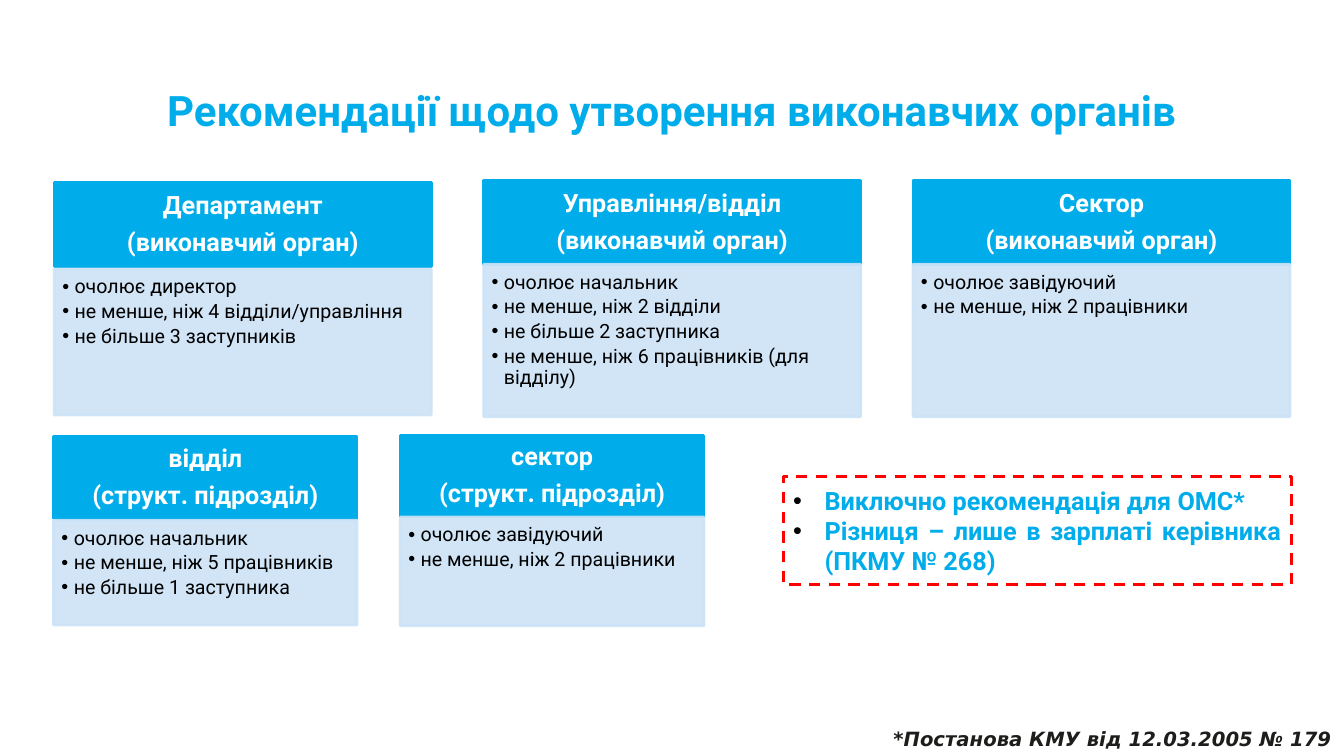
from dataclasses import dataclass

from lxml.etree import SubElement
from pptx import Presentation
from pptx.dml.color import RGBColor
from pptx.enum.dml import MSO_LINE
from pptx.enum.shapes import MSO_SHAPE
from pptx.enum.text import MSO_ANCHOR, PP_ALIGN
from pptx.oxml.ns import qn
from pptx.util import Cm, Pt


@dataclass(frozen=True)
class Theme:
    blue: str = "00ACE9"
    pale: str = "CCE3F7"
    red: str = "FF0000"
    white: str = "FFFFFF"
    black: str = "000000"
    ink: str = "1D1D1B"
    font: str = "Roboto"
    note_font: str = "DejaVu Sans"
    title: int = 30
    head: int = 18
    body: int = 14
    line: int = 2
    alpha: int = 90


THEME = Theme()

TITLE = "Рекомендації щодо утворення виконавчих органів"
ORGAN = "(виконавчий орган)"
UNIT = "(структ. підрозділ)"

# Each card: heading, points, (head top, body top, body height) in cm
ORGANS = [
    (["Департамент", ORGAN],
     ["очолює директор", "не менше, ніж 4 відділи/управління",
      "не більше 3 заступників"],
     (4.6, 6.78, 3.68)),
    (["Управління/відділ", ORGAN],
     ["очолює начальник", "не менше, ніж 2 відділи", "не більше 2 заступника",
      "не менше, ніж 6 працівників (для відділу)"],
     (4.55, 6.66, 3.84)),
    (["Сектор", ORGAN],
     ["очолює завідуючий", "не менше, ніж 2 працівники"],
     (4.55, 6.66, 3.84)),
]
UNITS = [
    (["відділ", UNIT],
     ["очолює начальник", "не менше, ніж 5 працівників",
      "не більше 1 заступника"],
     (11.0, 13.11, 2.64)),
    (["сектор", UNIT],
     ["очолює завідуючий", "не менше, ніж 2 працівники"],
     (10.97, 13.03, 2.74)),
]
# Each row: cards, left, step, card width, head height in cm
ROWS = [
    (ORGANS, 1.37, 10.82, 9.5, 2.11),
    (UNITS, 1.35, 8.74, 7.65, 2.06),
]
ADVICE = ["Виключно рекомендація для ОМС*",
          "Різниця – лише в зарплаті керівника (ПКМУ № 268)"]
SOURCE = "*Постанова КМУ від\u00a012.03.2005 № 179"


def color(code):
    return RGBColor.from_string(code)


def fade(solid):
    """Make a solid fill partly transparent."""
    tone = solid.find(qn("a:srgbClr"))
    SubElement(tone, qn("a:alpha")).set("val", str(THEME.alpha * 1000))


def bullet(para, indent):
    props = para._p.get_or_add_pPr()
    props.set("marL", str(Cm(indent)))
    props.set("indent", str(-Cm(indent)))
    tone = SubElement(props, qn("a:buClr"))
    SubElement(tone, qn("a:srgbClr")).set("val", THEME.black)
    SubElement(props, qn("a:buFont")).set("typeface", "Arial")
    SubElement(props, qn("a:buChar")).set("char", "•")


def write(frame, lines, size, tone, bold=True, align=PP_ALIGN.CENTER,
          anchor=MSO_ANCHOR.MIDDLE, spacing=None, after=0, indent=None,
          font=THEME.font, italic=False):
    frame.word_wrap = True
    frame.vertical_anchor = anchor
    frame.text = "\n".join(lines)
    for para in frame.paragraphs:
        para.alignment = align
        para.line_spacing = spacing
        para.space_after = Pt(after)
        if indent:
            bullet(para, indent)
        for run in para.runs:
            run.font.name = font
            run.font.size = Pt(size)
            run.font.bold = bold
            run.font.italic = italic
            run.font.color.rgb = color(tone)


def inset(frame, left, top, right, bottom):
    frame.margin_left, frame.margin_top = Cm(left), Cm(top)
    frame.margin_right, frame.margin_bottom = Cm(right), Cm(bottom)


def box(slide, place, line, fill=None):
    shape = slide.shapes.add_shape(MSO_SHAPE.RECTANGLE, *map(Cm, place))
    shape.shadow.inherit = False
    if fill:
        shape.fill.solid()
        shape.fill.fore_color.rgb = color(fill)
    else:
        shape.fill.background()
    shape.line.color.rgb = color(line)
    shape.line.width = Pt(THEME.line)
    return shape


def card(slide, heading, points, left, width, tall, tops):
    top, base, depth = tops
    head = box(slide, (left, top, width, tall), THEME.blue, THEME.blue)
    inset(head.text_frame, 0.36, 0.2, 0.36, 0.2)
    write(head.text_frame, heading, THEME.head, THEME.white,
          spacing=0.9, after=7)

    body = box(slide, (left, base, width, depth), THEME.pale, THEME.pale)
    for solid in body._element.spPr.iter(qn("a:solidFill")):
        fade(solid)
    inset(body.text_frame, 0.2, 0.2, 0.28, 0.3)
    write(body.text_frame, points, THEME.body, THEME.black, bold=False,
          align=PP_ALIGN.LEFT, anchor=MSO_ANCHOR.TOP, spacing=0.9,
          after=2.5, indent=0.31)


def main():
    deck = Presentation()
    deck.slide_width, deck.slide_height = Cm(33.87), Cm(19.05)
    slide = deck.slides.add_slide(deck.slide_layouts[5])

    title = slide.shapes.title
    title.left, title.top = Cm(2.33), Cm(1.01)
    title.width, title.height = Cm(29.21), Cm(3.68)
    write(title.text_frame, [TITLE], THEME.title, THEME.blue, spacing=0.9)

    for cards, left, step, width, tall in ROWS:
        for col, (heading, points, tops) in enumerate(cards):
            card(slide, heading, points, left + col * step, width, tall, tops)

    source = slide.shapes.add_textbox(Cm(22.05), Cm(18.19), Cm(11.76), Cm(0.86))
    write(source.text_frame, [SOURCE], THEME.body, THEME.ink,
          align=PP_ALIGN.RIGHT, anchor=MSO_ANCHOR.TOP,
          font=THEME.note_font, italic=True)

    advice = box(slide, (19.74, 12.01, 12.8, 2.72), THEME.red)
    advice.line.dash_style = MSO_LINE.DASH
    write(advice.text_frame, ADVICE, THEME.head, THEME.blue,
          align=PP_ALIGN.JUSTIFY, indent=0.79)

    deck.save("out.pptx")


if __name__ == "__main__":
    main()
